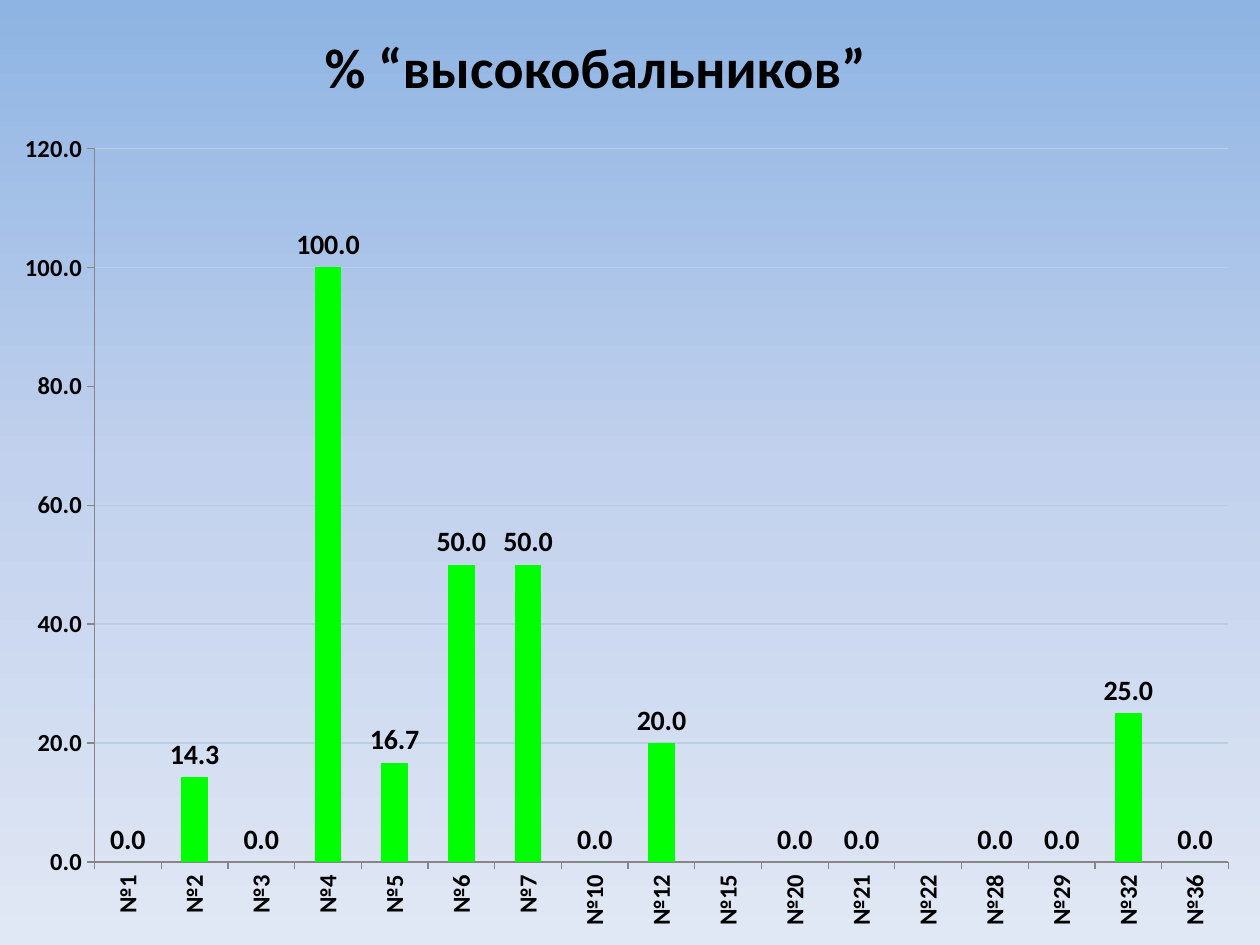
from copy import deepcopy

from lxml.etree import SubElement
from pptx import Presentation
from pptx.chart.data import CategoryChartData
from pptx.dml.color import RGBColor
from pptx.enum.chart import XL_CHART_TYPE, XL_LABEL_POSITION, XL_TICK_MARK
from pptx.enum.text import MSO_AUTO_SIZE
from pptx.oxml import parse_xml
from pptx.oxml.ns import nsdecls, qn
from pptx.util import Pt

FONT = "Calibri"
COLORS = {
    "text": "000000", "bar": "00FF00", "grid": "B9CDE5", "axis": "868686",
    "sky_top": "8EB4E3", "sky_middle": "C2D1ED", "sky_bottom": "E1E8F5",
}
SCHOOLS = [1, 2, 3, 4, 5, 6, 7, 10, 12, 15, 20, 21, 22, 28, 29, 32, 36]
HIGH_SCORES = {2: 14.3, 4: 100, 5: 16.7, 6: 50, 7: 50, 12: 20, 32: 25}
UNLABELLED = [15, 22]
PLOT_LAYOUT = {"x": 0.075, "y": 0.04, "w": 0.9, "h": 0.86}


def rgb(name):
    return RGBColor.from_string(COLORS[name])


def style_font(font, size):
    font.name = FONT
    font.size = Pt(size)
    font.bold = True
    font.color.rgb = rgb("text")


def paint_background(s):
    fill = s.background.fill
    fill.gradient()
    fill.gradient_angle = 270
    stops = s.element.find(".//" + qn("a:gsLst"))
    stops.insert(1, deepcopy(stops[0]))
    names = ["sky_top", "sky_middle", "sky_bottom"]
    for stop, name, position in zip(fill.gradient_stops, names, [0, 0.5, 1]):
        stop.color.rgb = rgb(name)
        stop.position = position


def add_title(s, left, top, width, height):
    tf = s.shapes.add_textbox(left, top, width, height).text_frame
    tf.word_wrap = False
    tf.auto_size = MSO_AUTO_SIZE.SHAPE_TO_FIT_TEXT
    p = tf.paragraphs[0]
    p.text = "% “высокобальников”"
    style_font(p.font, 32)


def fix_plot_area(chart):
    """Place the inner plot area by fractions of the chart."""
    area = chart.element.find(".//" + qn("c:plotArea"))
    for old in area.findall(qn("c:layout")):
        area.remove(old)
    layout = parse_xml(f"<c:layout {nsdecls('c')}/>")
    manual = SubElement(layout, qn("c:manualLayout"))
    settings = {"layoutTarget": "inner", "xMode": "edge", "yMode": "edge"}
    for tag, value in (settings | PLOT_LAYOUT).items():
        SubElement(manual, qn("c:" + tag)).set("val", str(value))
    area.insert(0, layout)


def style_axes(chart):
    for axis in (chart.category_axis, chart.value_axis):
        style_font(axis.tick_labels.font, 14)
        axis.major_tick_mark = XL_TICK_MARK.OUTSIDE
        axis.minor_tick_mark = XL_TICK_MARK.NONE
        axis.format.line.color.rgb = rgb("axis")
        axis.format.line.width = Pt(0.75)
    body = chart.category_axis._element.find(".//" + qn("a:bodyPr"))
    body.set("rot", "-5400000")
    body.set("vert", "horz")

    values = chart.value_axis
    values.minimum_scale, values.maximum_scale, values.major_unit = 0, 120, 20
    values.tick_labels.number_format = "0.0"
    values.tick_labels.number_format_is_linked = False
    values.has_major_gridlines = True
    line = values.major_gridlines.format.line
    line.color.rgb = rgb("grid")
    line.width = Pt(0.75)


def style_bars(plot):
    plot.gap_width = 150
    plot.vary_by_categories = False
    series = plot.series[0]
    series.format.fill.solid()
    series.format.fill.fore_color.rgb = rgb("bar")
    labels = series.data_labels
    labels.show_value = True
    labels.number_format = "0.0"
    labels.number_format_is_linked = False
    labels.position = XL_LABEL_POSITION.OUTSIDE_END
    style_font(labels.font, 16)
    for place, school in enumerate(UNLABELLED):
        labels._element.insert(place, parse_xml(
            f'<c:dLbl {nsdecls("c")}><c:idx val="{SCHOOLS.index(school)}"/>'
            '<c:delete val="1"/></c:dLbl>'))


def add_score_chart(s, left, top, width, height):
    data = CategoryChartData(number_format="0.0")
    data.categories = [f"№{school}" for school in SCHOOLS]
    data.add_series("Series 1", [HIGH_SCORES.get(school, 0) for school in SCHOOLS])
    chart = s.shapes.add_chart(
        XL_CHART_TYPE.COLUMN_CLUSTERED, left, top, width, height, data).chart
    chart.has_title = False
    chart.has_legend = False
    chart.font.name = FONT
    chart.font.size = Pt(10)
    chart.font.color.rgb = rgb("text")
    fix_plot_area(chart)
    style_axes(chart)
    style_bars(chart.plots[0])


def main():
    prs = Presentation()
    prs.slide_width, prs.slide_height = Pt(720), Pt(540)
    s = prs.slides.add_slide(prs.slide_layouts[6])
    paint_background(s)
    add_title(s, Pt(178.5), Pt(15), Pt(327), Pt(46))
    add_score_chart(s, Pt(0), Pt(66), Pt(720), Pt(474))
    prs.save("out.pptx")


if __name__ == "__main__":
    main()
